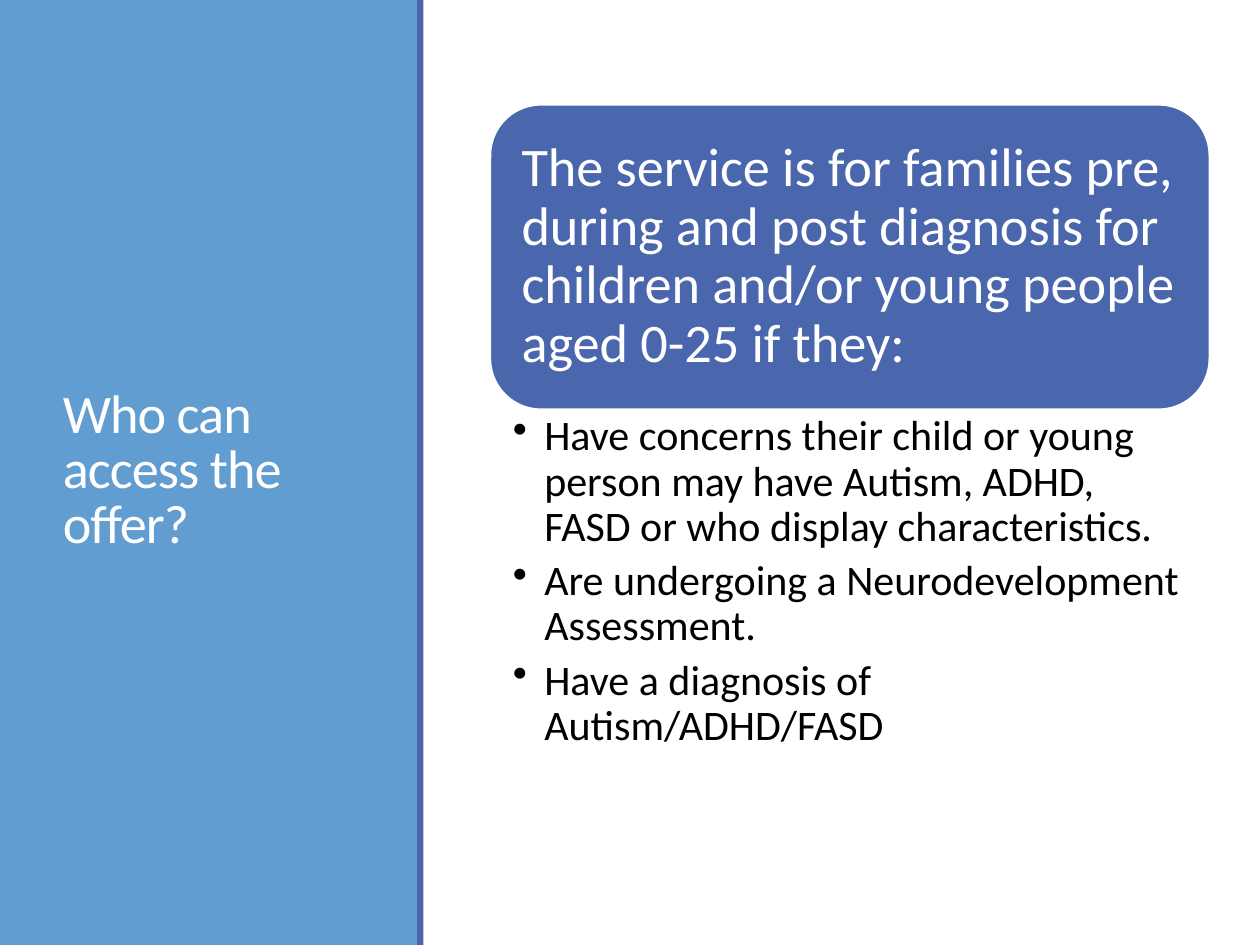
from dataclasses import dataclass
from pptx import Presentation, util as u
from pptx.dml.color import RGBColor
from pptx.enum import shapes, text
from pptx.oxml.ns import qn
from lxml import etree


@dataclass(frozen=True)
class Theme:
    font: str = "Calibri"
    sky: str = "629DD1"
    indigo: str = "4A66AC"
    white: str = "FFFFFF"
    black: str = "000000"
    heading: int = 31
    body: int = 24


theme = Theme()
deck = Presentation()
deck.slide_width, deck.slide_height = u.Inches(10), u.Inches(7.5)
page = deck.slides.add_slide(deck.slide_layouts[6])

# Columns and rows, in inches
side_width, rule_width = 3.32, 0.05
content_left, content_width = 3.89, 5.71
card_top, card_height = 0.83, 2.42
list_top = card_top + card_height
inset = 0.12


def add_panel(kind, left, top, width, height, color):
    panel = page.shapes.add_shape(kind, *map(u.Inches, (left, top, width, height)))
    panel.shadow.inherit = False
    panel.fill.solid()
    panel.fill.fore_color.rgb = RGBColor.from_string(color)
    panel.line.fill.background()
    return panel


def add_text(area, lines, size, color, margins, anchor, spacing, after=0):
    box = page.shapes.add_textbox(*map(u.Inches, area))
    frame = box.text_frame
    frame.word_wrap = True
    frame.vertical_anchor = anchor
    (frame.margin_left, frame.margin_top,
     frame.margin_right, frame.margin_bottom) = map(u.Inches, margins)
    for index, line in enumerate(lines):
        para = frame.add_paragraph() if index else frame.paragraphs[0]
        para.line_spacing = spacing
        para.space_after = u.Pt(after)
        span = para.add_run()
        span.text = line
        span.font.name = theme.font
        span.font.size = u.Pt(size)
        span.font.color.rgb = RGBColor.from_string(color)
    return frame.paragraphs


# Side panel with its edge rule and title
rectangle = shapes.MSO_SHAPE.RECTANGLE
add_panel(rectangle, 0, 0, side_width, 7.5, theme.sky)
title = add_text((0.4, 0.66, 2.53, 6.17), ["Who can access the offer?"],
                 theme.heading, theme.white, (0.1, 0.05, 0.1, 0.05),
                 text.MSO_ANCHOR.MIDDLE, 0.85)
title[0].runs[0].font._element.set("spc", "-50")
add_panel(rectangle, side_width - 0.01, 0, rule_width, 7.5, theme.indigo)

# Heading card
card = add_panel(shapes.MSO_SHAPE.ROUNDED_RECTANGLE, content_left, card_top,
                 content_width, card_height, theme.indigo)
card.line.color.rgb = RGBColor.from_string(theme.white)
card.line.width = u.Pt(1.25)
add_text((content_left + inset, card_top + inset,
          content_width - 2 * inset, card_height - 2 * inset),
         ["The service is for families pre, during and post diagnosis for "
          "children and/or young people aged 0-25 if they:"],
         theme.heading, theme.white, (0.13,) * 4, text.MSO_ANCHOR.MIDDLE, 0.9)

# Bulleted criteria
criteria = add_text(
    (content_left, list_top, content_width, 3.41),
    ["Have concerns their child or young person may have Autism, ADHD, FASD "
     "or who display characteristics.",
     "Are undergoing a Neurodevelopment Assessment.",
     "Have a diagnosis of Autism/ADHD/FASD"],
    theme.body, theme.black, (0.18, 0.04, 0.24, 0.04),
    text.MSO_ANCHOR.TOP, 0.9, after=5)
for para in criteria:
    settings = para._p.get_or_add_pPr()
    settings.set("marL", str(u.Inches(0.25)))
    settings.set("indent", str(-u.Inches(0.25)))
    etree.SubElement(settings, qn("a:buChar"), char="•")

deck.save("out.pptx")
